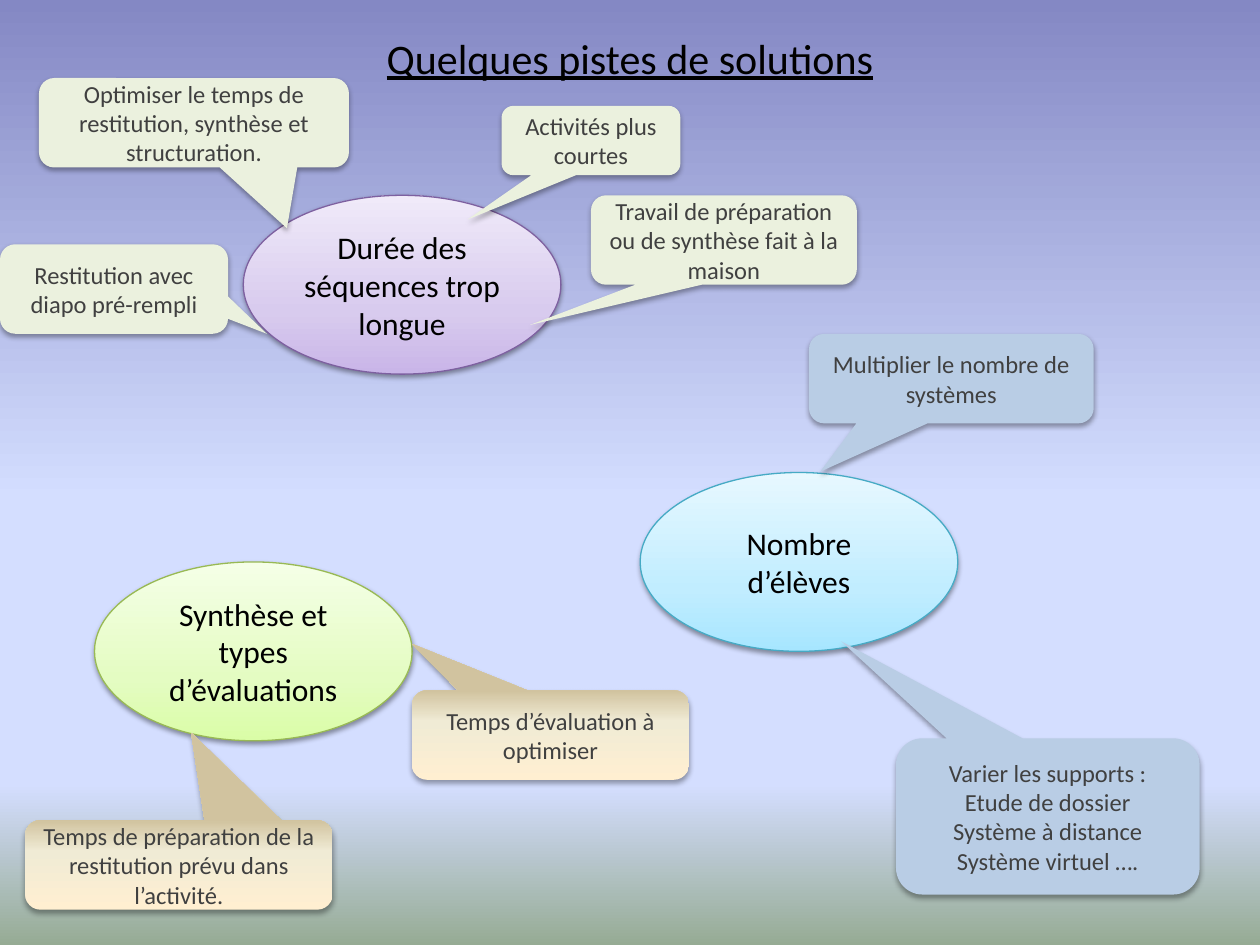
from lxml.etree import SubElement
from pptx import Presentation
from pptx.dml.color import RGBColor
from pptx.enum.shapes import MSO_SHAPE as Preset
from pptx.enum.text import MSO_ANCHOR as Anchor, PP_ALIGN as Align
from pptx.oxml.ns import qn
from pptx.util import Pt

SLIDE_SIZE = (720, 540)
TITLE_BOX = (0, 0, 720, 65.5)
THEME_SIZE = (181.5, 102.2)
BACKGROUND = [(0, "8488C4"), (53, "D4DEFF"), (83, "D4DEFF"), (100, "96AB94")]
SAND = [(0, "FFEFD1"), (65, "F0EBD5"), (100, "D1C39F")]

THEMES = [
    {
        "origin": (139, 111.6), "text": "Durée des séquences trop longue",
        "stops": [(0, "C9B5E8"), (35, "D8CBEE"), (100, "F0EAF9")],
        "outline": "7D60A0", "callout_fill": "EBF1DE",
        "callouts": [
            ("Activités plus courtes", (147.6, -51.1, 102.2, 39.6), (-0.69, 1.14)),
            ("Optimiser le temps de restitution, synthèse et structuration.",
             (-116.7, -67, 177.1, 51.1), (0.3, 1.18)),
            ("Restitution avec diapo pré-rempli", (-139, 28, 130.3, 51.1), (0.67, 0.5)),
            ("Travail de préparation ou de synthèse fait à la maison",
             (198.7, 0, 151.9, 51.1), (-0.73, 0.95)),
        ],
    },
    {
        "origin": (365.8, 270), "text": "Nombre d’élèves",
        "stops": [(0, "A7E6FF"), (35, "C1EDFF"), (100, "E7F8FF")],
        "outline": "46AAC5", "callout_fill": "B9CDE5",
        "callouts": [
            ("Multiplier le nombre de systèmes", (96.5, -79.2, 162.7, 51.1), (-0.46, 1.04)),
            ("Varier les supports :\vEtude de dossier\nSystème à distance\nSystème virtuel ….",
             (146.2, 151.9, 173.5, 89.3), (-0.68, -1.12)),
        ],
    },
    {
        "origin": (54, 321.1), "text": "Synthèse et types d’évaluations",
        "stops": [(0, "DAFDA7"), (35, "E4FCC2"), (100, "F5FFE7")],
        "outline": "98B955", "callout_fill": SAND,
        "callouts": [
            ("Temps d’évaluation à optimiser", (181.4, 73.4, 158.4, 51.1), (-0.5, -1.02)),
            ("Temps de préparation de la restitution prévu dans l’activité.",
             (-39.6, 147.6, 175.7, 51.1), (0.04, -1.48)),
        ],
    },
]


def color(value):
    """Turn a hex string into a colour."""
    return RGBColor.from_string(value)


def paint(fill, element, value, angle=90):
    """Apply a solid colour, or gradient stops at a counter-clockwise angle."""
    if isinstance(value, str):
        fill.solid()
        fill.fore_color.rgb = color(value)
        return
    fill.gradient()
    fill.gradient_angle = angle
    stop_list = element.find(".//" + qn("a:gsLst"))
    for stop in list(stop_list):
        stop_list.remove(stop)
    for position, value_hex in value:
        stop = SubElement(stop_list, qn("a:gs"), pos=str(position * 1000))
        SubElement(stop, qn("a:srgbClr"), val=value_hex)


def add_shadow(shape, opacity, distance):
    """Give a shape a soft shadow straight below it."""
    shape.shadow.inherit = False
    effects = shape._element.spPr.find(qn("a:effectLst"))
    shadow = SubElement(effects, qn("a:outerShdw"), blurRad=str(Pt(3.1)),
                        dist=str(Pt(distance)), dir="5400000", rotWithShape="0")
    tint = SubElement(shadow, qn("a:srgbClr"), val="000000")
    SubElement(tint, qn("a:alpha"), val=str(opacity * 1000))


def write(shape, text, size, text_color, **extra):
    """Write centred text in a shape."""
    frame = shape.text_frame
    frame.text = text
    frame.word_wrap = True
    frame.vertical_anchor = Anchor.MIDDLE
    font_format = {"name": "Calibri", "size": Pt(size), **extra}
    for paragraph in frame.paragraphs:
        paragraph.alignment = Align.CENTER
        for run in paragraph.runs:
            for name, value in font_format.items():
                setattr(run.font, name, value)
            run.font.color.rgb = color(text_color)


def place_title(slide, box):
    """Move and format the title placeholder."""
    title = slide.shapes.title
    for name, value in zip(("left", "top", "width", "height"), box):
        setattr(title, name, Pt(value))
    write(title, "Quelques pistes de solutions", 24, "000000", underline=True)


def add_callout(slide, box, text, pointer, fill):
    """Add a rounded callout whose tip lies at the pointer."""
    callout = slide.shapes.add_shape(Preset.ROUNDED_RECTANGULAR_CALLOUT, *map(Pt, box))
    for index, value in enumerate((*pointer, 0.17)):
        callout.adjustments[index] = value
    paint(callout.fill, callout._element, fill)
    callout.line.fill.background()
    add_shadow(callout, 35, 1.8)
    write(callout, text, 14, "404040")


def add_theme(slide, box, theme):
    """Add a theme ellipse and the callouts around it."""
    left, top = box[:2]
    ellipse = slide.shapes.add_shape(Preset.OVAL, *map(Pt, box))
    paint(ellipse.fill, ellipse._element, theme["stops"])
    ellipse.line.color.rgb = color(theme["outline"])
    ellipse.line.width = Pt(0.75)
    add_shadow(ellipse, 38, 1.6)
    write(ellipse, theme["text"], 18, "000000")
    for text, (x, y, width, height), pointer in theme["callouts"]:
        add_callout(slide, (left + x, top + y, width, height), text, pointer,
                    theme["callout_fill"])


def main():
    """Build and save the slide."""
    presentation = Presentation()
    presentation.slide_width, presentation.slide_height = map(Pt, SLIDE_SIZE)
    slide = presentation.slides.add_slide(presentation.slide_layouts[5])
    paint(slide.background.fill, slide._element, BACKGROUND, 270)
    place_title(slide, TITLE_BOX)
    for theme in THEMES:
        add_theme(slide, theme["origin"] + THEME_SIZE, theme)
    presentation.save("out.pptx")


if __name__ == "__main__":
    main()
